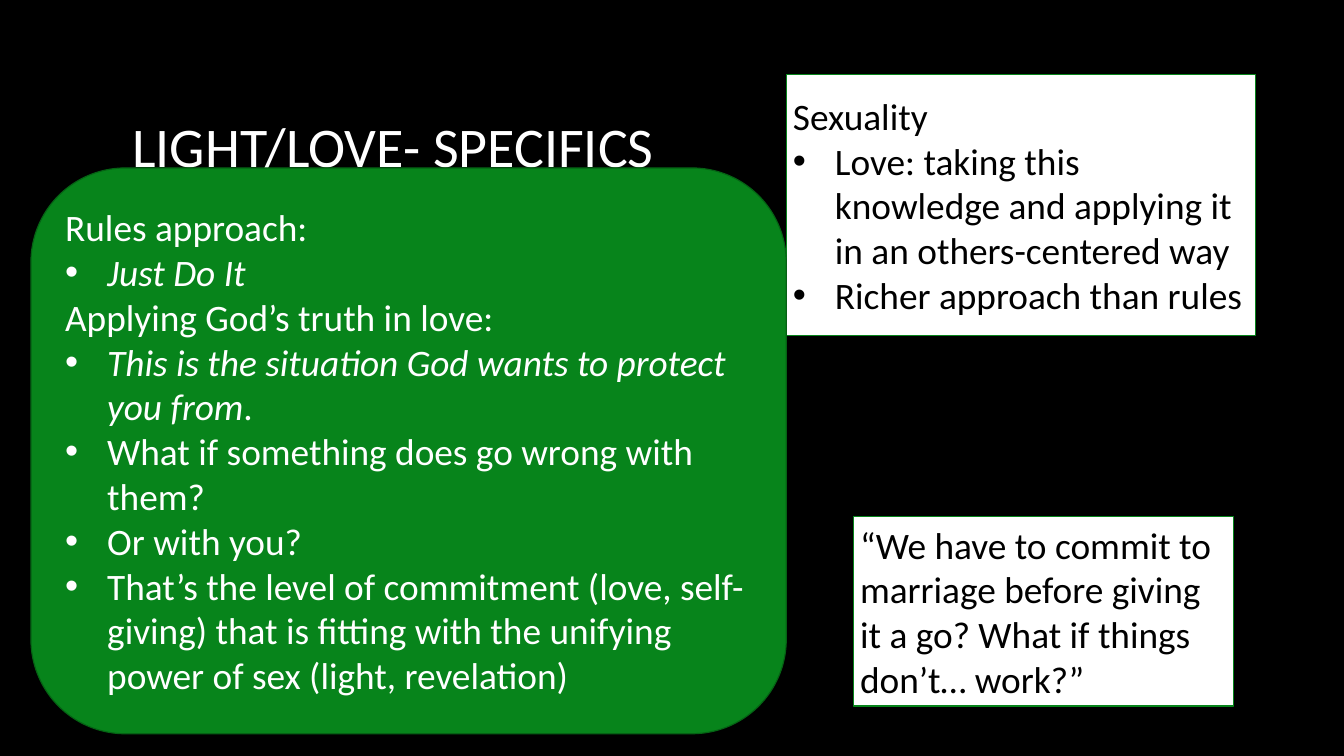
from lxml import etree
from pptx import Presentation
from pptx.dml.color import RGBColor
from pptx.enum.shapes import MSO_SHAPE
from pptx.enum.text import MSO_ANCHOR, MSO_AUTO_SIZE, PP_ALIGN
from pptx.oxml.ns import qn
from pptx.util import Cm, Pt

RECTANGLE = MSO_SHAPE.RECTANGLE
ROUNDED = MSO_SHAPE.ROUNDED_RECTANGLE
MIDDLE = MSO_ANCHOR.MIDDLE
NO_FIT = MSO_AUTO_SIZE.NONE
LEFT = PP_ALIGN.LEFT
FONT = "Calibri"
BULLET_INDENT = Cm(1.59)
TITLE_ONLY = 5

COLORS = {
    "black": "000000",
    "white": "FFFFFF",
    "green": "07841B",
    "dark green": "056214",
}

SEXUALITY = [
    (False, [("Sexuality", False)]),
    (True, [("Love: taking this knowledge and applying it in an others-centered way", False)]),
    (True, [("Richer approach than rules", False)]),
]
APPROACHES = [
    (False, [("Rules approach:", False)]),
    (True, [("Just Do It", True)]),
    (False, [("Applying God’s truth in love:", False)]),
    (True, [("This is the situation God wants to protect you from", True), (".", False)]),
    (True, [("What if something does go wrong with them?", False)]),
    (True, [("Or with you?", False)]),
    (True, [("That’s the level of commitment (love, self-giving) that is fitting "
             "with the unifying power of sex (light, revelation)", False)]),
]
QUOTE = [
    (False, [("“We have to commit to marriage before giving it a go? "
              "What if things don’t… work?”", False)]),
]


def color(name):
    """Return the named colour."""
    return RGBColor.from_string(COLORS[name])


def format_font(font, size, color_name, italic=False):
    """Set the face, size, colour and slant of a font."""
    font.name = FONT
    font.size = Pt(size)
    font.color.rgb = color(color_name)
    font.italic = italic


def add_bullet(para):
    """Give a paragraph a round bullet with a hanging indent."""
    properties = para._p.get_or_add_pPr()
    properties.set("marL", str(BULLET_INDENT))
    properties.set("indent", str(-BULLET_INDENT))
    etree.SubElement(properties, qn("a:buFont")).set("typeface", "Arial")
    etree.SubElement(properties, qn("a:buChar")).set("char", "•")


def set_title(page, text, left, top, width, height):
    """Place and format the title placeholder."""
    title = page.shapes.title
    title.left, title.top, title.width, title.height = left, top, width, height
    frame = title.text_frame
    frame.text = text
    frame.auto_size = NO_FIT
    frame.vertical_anchor = MIDDLE
    para = frame.paragraphs[0]
    para.alignment = LEFT
    para.line_spacing = 0.9
    format_font(para.runs[0].font, 60, "white")


def add_panel(page, kind, position, colors, paragraphs):
    """Add a filled panel holding plain and bulleted paragraphs."""
    fill, line, text_color = colors
    panel = page.shapes.add_shape(kind, *position)
    panel.shadow.inherit = False
    panel.fill.solid()
    panel.fill.fore_color.rgb = color(fill)
    panel.line.color.rgb = color(line)
    panel.line.width = Pt(1.25)
    frame = panel.text_frame
    frame.word_wrap = True
    frame.vertical_anchor = MIDDLE
    for index, (bulleted, spans) in enumerate(paragraphs):
        para = frame.add_paragraph() if index else frame.paragraphs[0]
        para.alignment = LEFT
        if bulleted:
            add_bullet(para)
        for text, italic in spans:
            span = para.add_run()
            span.text = text
            format_font(span.font, 40, text_color, italic)


def main():
    """Build the slide and save the deck."""
    deck = Presentation()
    deck.slide_width, deck.slide_height = Cm(50.8), Cm(28.58)
    page = deck.slides.add_slide(deck.slide_layouts[TITLE_ONLY])
    page.background.fill.solid()
    page.background.fill.fore_color.rgb = color("black")

    white_panel = ("white", "green", "black")
    green_panel = ("green", "dark green", "white")
    set_title(page, "LIGHT/LOVE- SPECIFICS", Cm(4.75), Cm(2.57), Cm(41.28), Cm(6.17))
    add_panel(page, RECTANGLE, (Cm(29.72), Cm(2.82), Cm(17.73), Cm(9.86)),
              white_panel, SEXUALITY)
    add_panel(page, ROUNDED, (Cm(1.17), Cm(6.35), Cm(28.55), Cm(21.39)),
              green_panel, APPROACHES)
    add_panel(page, RECTANGLE, (Cm(32.26), Cm(19.53), Cm(14.35), Cm(7.16)),
              white_panel, QUOTE)
    deck.save("out.pptx")


if __name__ == "__main__":
    main()
